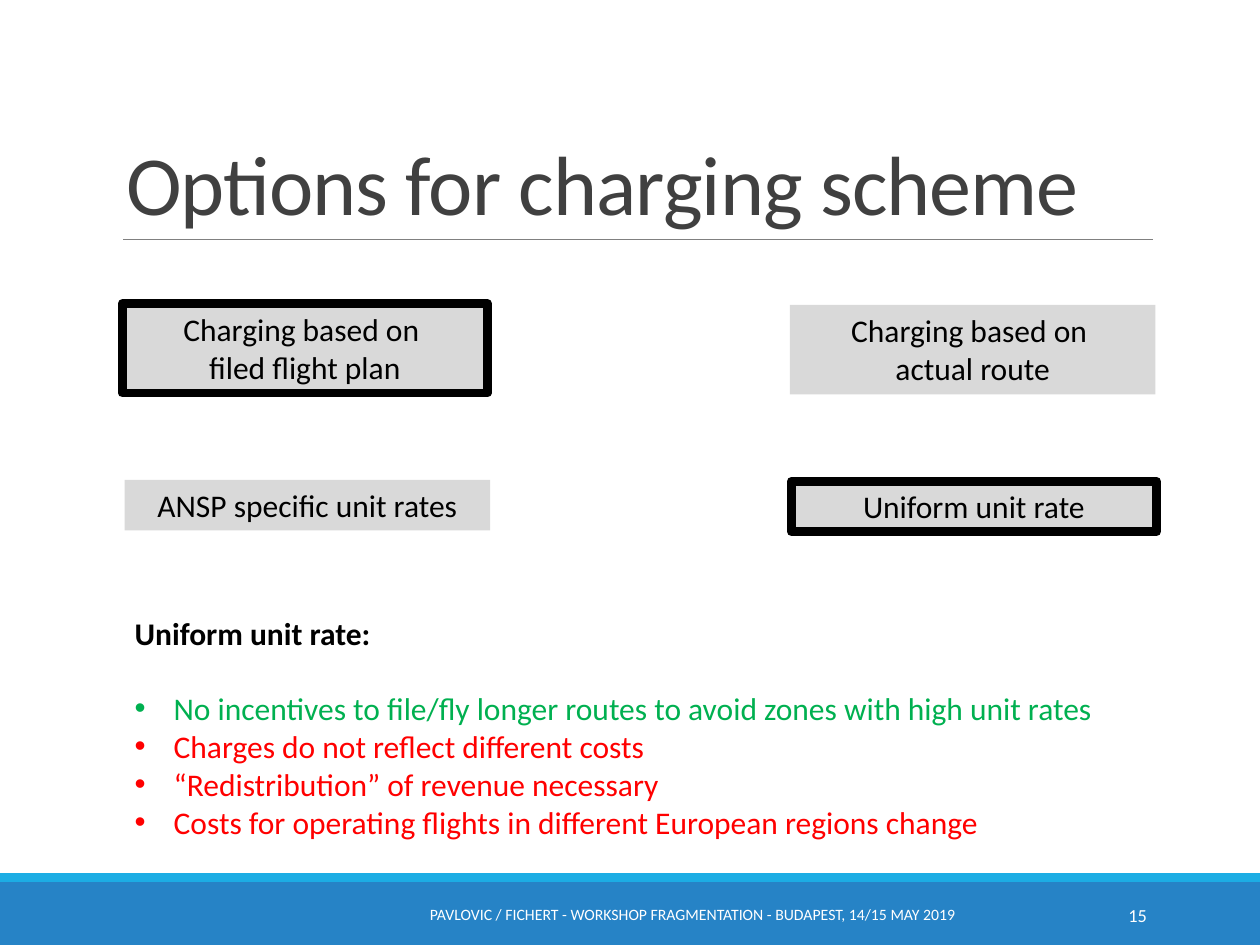
from dataclasses import dataclass

import pptx
import pptx.dml.color
import pptx.enum.shapes
import pptx.enum.text
import pptx.oxml.ns
import pptx.util
from lxml import etree

Inches = pptx.util.Inches
Pt = pptx.util.Pt
RGBColor = pptx.dml.color.RGBColor
ALIGN = pptx.enum.text.PP_ALIGN
ANCHOR = pptx.enum.text.MSO_ANCHOR
AUTO = pptx.enum.text.MSO_AUTO_SIZE
qn = pptx.oxml.ns.qn

FONT = "Calibri"
BLACK = RGBColor(0x00, 0x00, 0x00)
WHITE = RGBColor(0xFF, 0xFF, 0xFF)
TITLE_GRAY = RGBColor(0x40, 0x40, 0x40)
RULE_GRAY = RGBColor(0x80, 0x80, 0x80)
BOX_GRAY = RGBColor(0xD9, 0xD9, 0xD9)
BLUE = RGBColor(0x26, 0x83, 0xC6)
CYAN = RGBColor(0x1C, 0xAD, 0xE4)
GREEN = RGBColor(0x00, 0xB0, 0x50)
RED = RGBColor(0xFF, 0x00, 0x00)


@dataclass
class Option:
    text: str
    left: float
    top: float
    height: float
    chosen: bool = False


@dataclass
class Point:
    text: str
    color: RGBColor


OPTIONS = [
    Option("Charging based on \nfiled flight plan", 0.97, 2.41, 0.71, chosen=True),
    Option("Charging based on \nactual route", 6.27, 2.42, 0.71),
    Option("ANSP specific unit rates", 0.99, 3.81, 0.4),
    Option("Uniform unit rate", 6.28, 3.82, 0.4, chosen=True),
]
POINTS = [
    Point("No incentives to file/fly longer routes to avoid zones with high unit rates", GREEN),
    Point("Charges do not reflect different costs", RED),
    Point("“Redistribution” of revenue necessary", RED),
    Point("Costs for operating flights in different European regions change", RED),
]


def write(p, text: str, *, size: float = 18, color: RGBColor = BLACK,
          bold: bool = False, align=ALIGN.LEFT) -> None:
    p.text = text
    p.alignment = align
    for r in p.runs:
        r.font.name = FONT
        r.font.size = Pt(size)
        r.font.bold = bold
        r.font.color.rgb = color


def add_rect(s, left: float, top: float, width: float, height: float, fill: RGBColor):
    sp = s.shapes.add_shape(pptx.enum.shapes.MSO_SHAPE.RECTANGLE, Inches(left),
                            Inches(top), Inches(width), Inches(height))
    sp.shadow.inherit = False
    sp.fill.solid()
    sp.fill.fore_color.rgb = fill
    sp.line.fill.background()
    return sp


def add_text_box(s, left: float, top: float, width: float, height: float, anchor=ANCHOR.TOP):
    sp = s.shapes.add_textbox(Inches(left), Inches(top), Inches(width), Inches(height))
    tf = sp.text_frame
    tf.word_wrap = True
    tf.vertical_anchor = anchor
    return tf


def add_option(s, option: Option) -> None:
    sp = add_rect(s, option.left, option.top, 2.9, option.height, BOX_GRAY)
    if option.chosen:
        sp.line.color.rgb = BLACK
        sp.line.width = Pt(5)
        etree.SubElement(sp.line._get_or_add_ln(), qn("a:round"))
    tf = sp.text_frame
    tf.word_wrap = True
    tf.vertical_anchor = ANCHOR.TOP
    write(tf.paragraphs[0], option.text, align=ALIGN.CENTER)


def add_bullet(tf, point: Point) -> None:
    p = tf.add_paragraph()
    write(p, point.text, color=point.color)
    pPr = p._p.get_or_add_pPr()
    pPr.set("marL", str(Inches(0.31)))
    pPr.set("indent", str(-Inches(0.31)))
    etree.SubElement(pPr, qn("a:buFont")).set("typeface", "Arial")
    etree.SubElement(pPr, qn("a:buChar")).set("char", "•")


def add_title(s, text: str) -> None:
    sp = s.shapes.title
    sp.left, sp.top = Inches(0.9), Inches(0.31)
    sp.width, sp.height = Inches(8.25), Inches(1.59)
    tf = sp.text_frame
    tf.auto_size = AUTO.NONE
    tf.vertical_anchor = ANCHOR.BOTTOM
    p = tf.paragraphs[0]
    write(p, text, size=48, color=TITLE_GRAY)
    p.line_spacing = 0.85
    p.runs[0].font._element.set("spc", "-50")


def add_rule(s) -> None:
    cxn = s.shapes.add_connector(pptx.enum.shapes.MSO_CONNECTOR.STRAIGHT,
                                 Inches(0.98), Inches(1.9), Inches(9.15), Inches(1.9))
    cxn.line.color.rgb = RULE_GRAY
    cxn.line.width = Pt(0.5)
    etree.SubElement(cxn._element.spPr, qn("a:effectLst"))


def main() -> None:
    prs = pptx.Presentation()
    prs.slide_width, prs.slide_height = Inches(10), Inches(7.5)
    s = prs.slides.add_slide(prs.slide_layouts[5])

    # Footer bands, title and rule
    add_rect(s, 0, 7, 10, 0.5, BLUE)
    add_rect(s, 0, 6.93, 10, 0.07, CYAN)
    add_rule(s)
    add_title(s, "Options for charging scheme")

    # Charging options, the chosen ones framed
    for option in OPTIONS:
        add_option(s, option)

    # Pros and cons
    tf = add_text_box(s, 0.97, 4.82, 8.21, 1.92)
    heading = tf.paragraphs[0]
    write(heading, "Uniform unit rate:", bold=True)
    heading.space_after = Pt(21.6)
    for point in POINTS:
        add_bullet(tf, point)

    # Slide number and footer
    tf = add_text_box(s, 8.12, 7.06, 1.08, 0.4, ANCHOR.MIDDLE)
    write(tf.paragraphs[0], "15", size=10.5, color=WHITE, align=ALIGN.RIGHT)
    tf = add_text_box(s, 3.02, 7.06, 4.95, 0.4, ANCHOR.MIDDLE)
    write(tf.paragraphs[0],
          "PAVLOVIC / FICHERT - WORKSHOP FRAGMENTATION - BUDAPEST, 14/15 MAY 2019",
          size=9, color=WHITE, align=ALIGN.CENTER)

    prs.save("out.pptx")


if __name__ == "__main__":
    main()
